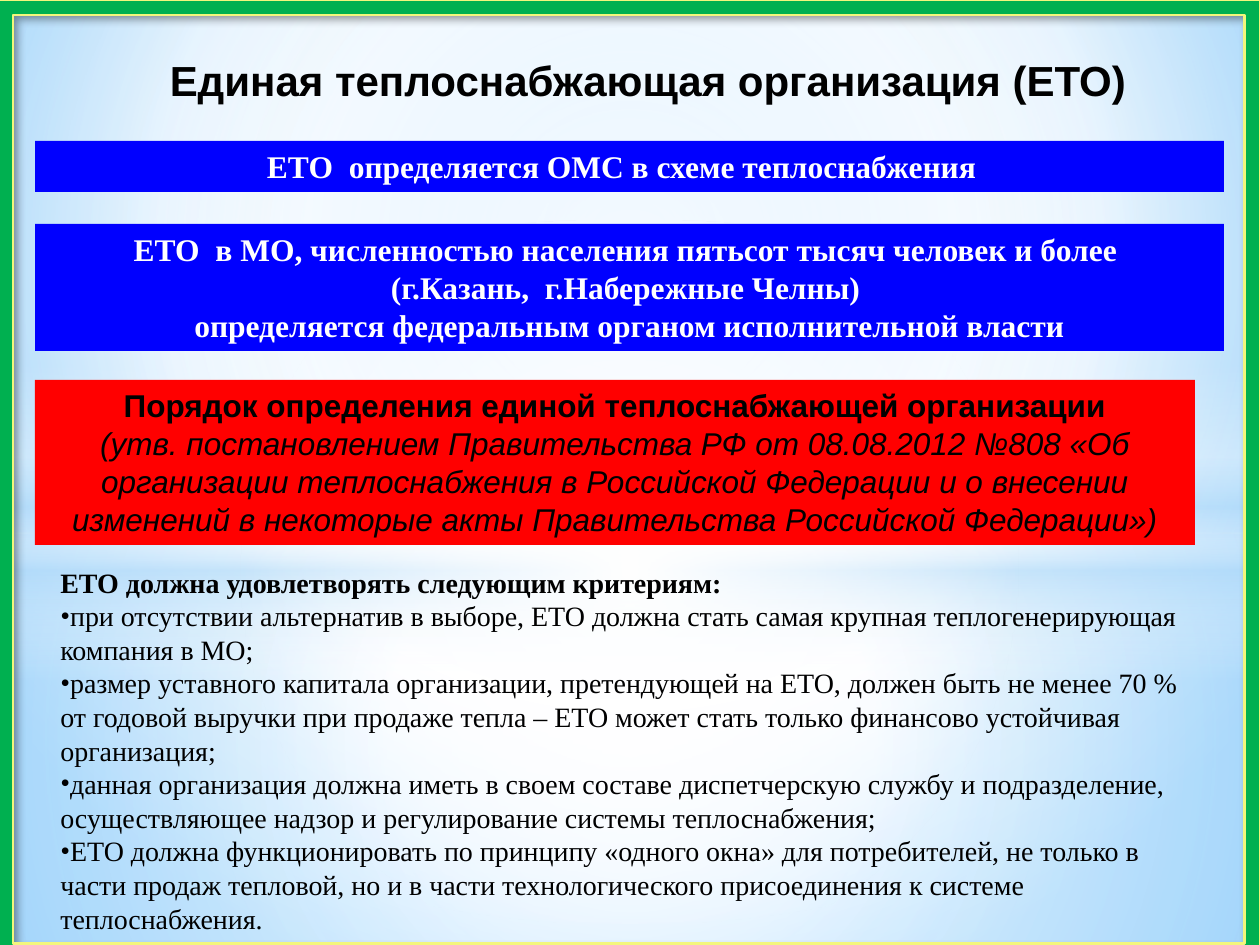
import pptx
import pptx.util
import pptx.oxml
import pptx.oxml.ns
import pptx.dml.color
import pptx.enum.shapes
import pptx.enum.text
from dataclasses import dataclass
from lxml import etree

SHAPE = pptx.enum.shapes.MSO_SHAPE
ALIGN = pptx.enum.text.PP_ALIGN
ANCHOR = pptx.enum.text.MSO_ANCHOR
qn = pptx.oxml.ns.qn


@dataclass
class Theme:
    white: str = "FFFFFF"
    black: str = "000000"
    pale: str = "B4DCFA"
    sky: str = "9ED5FF"
    deep: str = "5BB9FF"
    green: str = "00B050"
    cream: str = "F3F67C"
    blue: str = "0000FF"
    red: str = "FF0000"
    sans: str = "Arial"
    serif: str = "Times New Roman"
    head: int = 24
    band: int = 18
    body: int = 16


def px(n):
    return round(n * 914400 / 126)


def rgb(hue):
    return pptx.dml.color.RGBColor.from_string(hue)


def add(node, tag, **attrs):
    return etree.SubElement(node, qn(tag), {k: str(v) for k, v in attrs.items()})


def tint(node, hue, alpha):
    add(add(node, "a:srgbClr", val=hue), "a:alpha", val=alpha * 1000)


class Deck:
    def __init__(self, theme):
        self.theme = theme
        self.prs = pptx.Presentation()
        self.prs.slide_width, self.prs.slide_height = px(1260), px(945)
        self.slide = self.prs.slides.add_slide(self.prs.slide_layouts[6])

    def blend(self, fill, node, stops, focus=None, angle=None):
        """Fill with stops of (place, colour, opacity), radial or at an angle."""
        fill.gradient()
        grad = next(node.iter(qn("a:gradFill")))
        for kid in list(grad):
            grad.remove(kid)
        steps = add(grad, "a:gsLst")
        for place, hue, alpha in stops:
            tint(add(steps, "a:gs", pos=place * 1000), hue, alpha)
        if focus:
            sides = {k: v * 1000 for k, v in zip("ltrb", focus)}
            add(add(grad, "a:path", path="circle"), "a:fillToRect", **sides)
        else:
            add(grad, "a:lin", ang=angle * 60000, scaled=0)

    def back(self, stops, focus):
        self.blend(self.slide.background.fill, self.slide.element, stops, focus)

    def shape(self, kind, box, hue=None):
        item = self.slide.shapes.add_shape(kind, *map(px, box))
        item.shadow.inherit = False
        item.line.fill.background()
        if hue:
            item.fill.solid()
            item.fill.fore_color.rgb = rgb(hue)
        return item

    def glow(self, kind, box, stops, focus=(50, 50, 50, 50), angle=None):
        item = self.shape(kind, box)
        self.blend(item.fill, item.element, stops, focus, angle)

    def frame(self, box, rim):
        item = self.shape(SHAPE.FRAME, box, self.theme.green)
        item.adjustments[0] = rim
        item.line.color.rgb = rgb(self.theme.cream)
        item.line.width = pptx.util.Pt(1.25)
        effects = item.element.spPr.find(qn("a:effectLst"))
        cast = add(effects, "a:outerShdw", blurRad=pptx.util.Pt(4), dist=pptx.util.Pt(3),
                   dir=45 * 60000, algn="tl", rotWithShape=0)
        tint(cast, self.theme.black, 40)

    def letter(self, item, lines, font, size, hue, align):
        """Lines are (text, style); style holds b, i or a bullet mark."""
        text = item.text_frame
        text.word_wrap = True
        text.text = "\n".join(line for line, _ in lines)
        for para, (_, style) in zip(text.paragraphs, lines):
            para.alignment = align
            if "•" in style:
                props = para._p.get_or_add_pPr()
                props.set("marL", "0")
                props.set("indent", "0")
                add(props, "a:buFont", typeface=font)
                add(props, "a:buChar", char="•")
            for run in para.runs:
                run.font.name, run.font.size = font, pptx.util.Pt(size)
                run.font.bold, run.font.italic = "b" in style, "i" in style
                run.font.color.rgb = rgb(hue)

    def text(self, box, lines, font, size, align):
        item = self.slide.shapes.add_textbox(*map(px, box))
        self.letter(item, lines, font, size, self.theme.black, align)

    def band(self, box, lines, fill, font, hue):
        item = self.shape(SHAPE.RECTANGLE, box, fill)
        item.text_frame.vertical_anchor = ANCHOR.TOP
        self.letter(item, lines, font, self.theme.band, hue, ALIGN.CENTER)
        item.text_frame.auto_size = pptx.enum.text.MSO_AUTO_SIZE.SHAPE_TO_FIT_TEXT


def main():
    look = Theme()
    deck = Deck(look)
    white, pale = look.white, look.pale

    # Sky backdrop
    deck.back([(0, look.sky, 100), (60, white, 100), (100, look.deep, 100)],
              (20, 10, 20, 60))
    deck.glow(SHAPE.RECTANGLE, (0, 533, 1260, 412),
              [(0, white, 92), (37, white, 77), (100, pale, 80)])
    deck.glow(SHAPE.RECTANGLE, (0, 0, 1260, 533),
              [(0, white, 90), (48, white, 63), (100, pale, 80)])
    deck.glow(SHAPE.RECTANGLE, (0, 365, 1260, 315),
              [(0, white, 0), (29, white, 30), (45, pale, 40),
               (55, white, 26), (65, pale, 60), (100, white, 0)],
              focus=None, angle=90)
    deck.glow(SHAPE.OVAL, (0, 220, 1260, 703), [(0, white, 100), (54, white, 0)])

    # Title and border
    deck.text((72, 48, 1152, 88), [("Единая теплоснабжающая организация (ЕТО)", "b")],
              look.sans, look.head, ALIGN.CENTER)
    deck.frame((-2, 0, 1262, 959), 0.016)

    # Coloured bands
    deck.band((35, 141, 1189, 51),
              [("ЕТО  определяется ОМС в схеме теплоснабжения  ", "b")],
              look.blue, look.serif, white)
    deck.band((35, 224, 1189, 127),
              [("ЕТО  в МО, численностью населения пятьсот тысяч человек и более ", "b"),
               ("(г.Казань,  г.Набережные Челны) ", "b"),
               ("определяется федеральным органом исполнительной власти", "b")],
              look.blue, look.serif, white)
    deck.band((35, 380, 1160, 165),
              [("Порядок определения единой теплоснабжающей организации", "b"),
               ("(утв. постановлением Правительства РФ от 08.08.2012 №808 «Об организации "
                "теплоснабжения в Российской Федерации и о внесении изменений в некоторые "
                "акты Правительства Российской Федерации»)", "i")],
              look.red, look.sans, look.black)

    # Criteria
    deck.text((48, 559, 1162, 386),
              [("ЕТО должна удовлетворять следующим критериям:", "b"),
               ("при отсутствии альтернатив в выборе, ЕТО должна стать самая крупная "
                "теплогенерирующая компания в МО;", "•"),
               ("размер уставного капитала организации, претендующей на ЕТО, должен быть "
                "не менее 70 % от годовой выручки при продаже тепла – ЕТО может стать "
                "только финансово устойчивая организация;", "•"),
               ("данная организация должна иметь в своем составе диспетчерскую службу и "
                "подразделение, осуществляющее надзор и регулирование системы "
                "теплоснабжения;", "•"),
               ("ЕТО должна функционировать по принципу «одного окна» для потребителей, "
                "не только в части продаж тепловой, но и в части технологического "
                "присоединения к системе теплоснабжения.", "•")],
              look.serif, look.body, ALIGN.LEFT)

    deck.prs.save("out.pptx")


if __name__ == "__main__":
    main()
